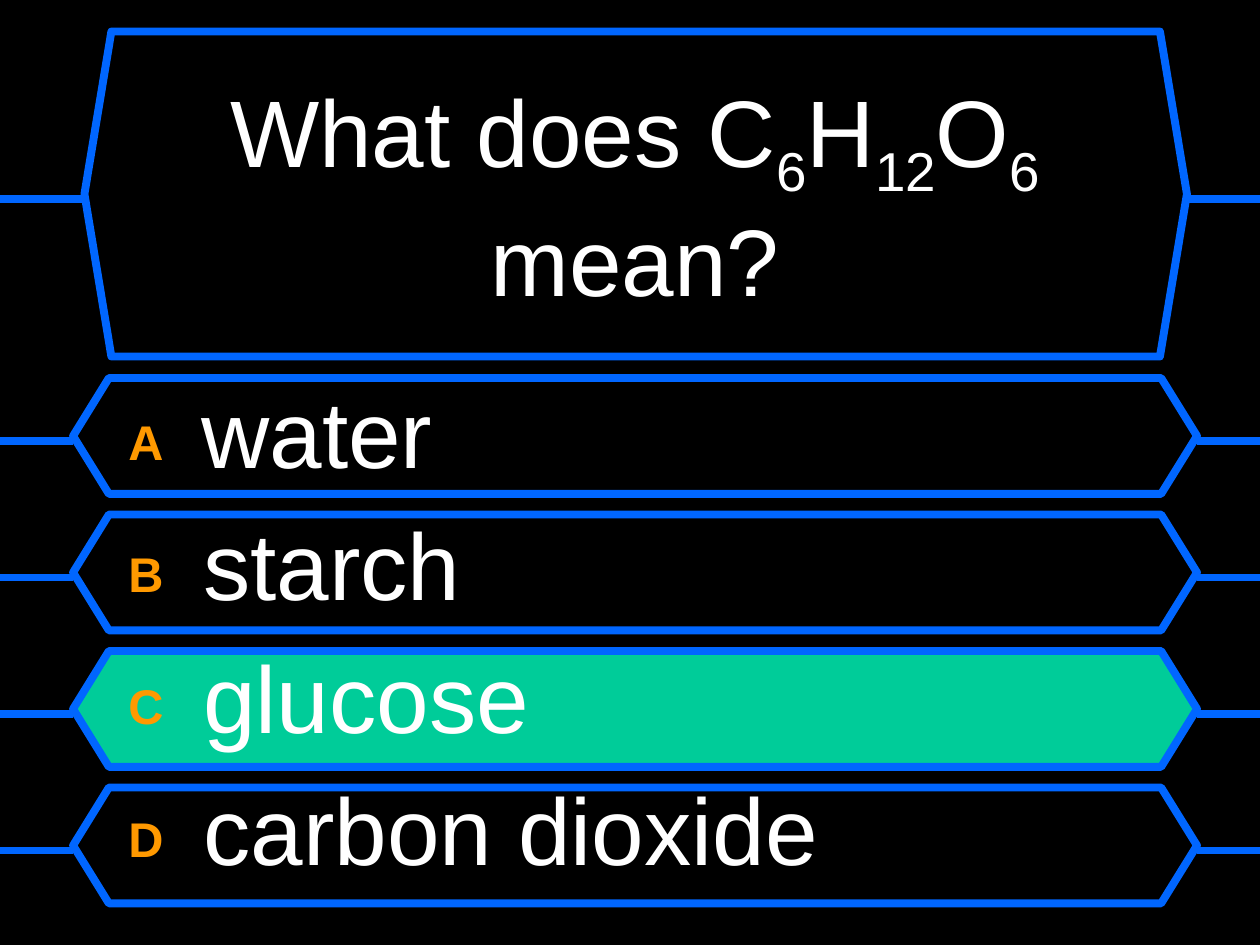
from pptx import Presentation
from pptx.dml.color import RGBColor
from pptx.enum import shapes, text
from pptx.oxml.xmlchemy import OxmlElement
from pptx.util import Inches, Pt

COLORS = {"black": "000000", "blue": "0066FF", "green": "00CC99",
          "orange": "FF9900", "white": "FFFFFF"}
SLIDE_WIDTH, SLIDE_HEIGHT = 10, 7.5
QUESTION = [("What does C", 0), ("6", -25), ("H", 0), ("12", -25),
            ("O", 0), ("6", -25), (" mean?", 0)]
ANSWERS = ["water", "starch", "glucose", "carbon dioxide"]
CORRECT = "glucose"
ANSWER_PITCH = 3.25 / 3
WIRE_DROP = 0.04


def rgb(name):
    return RGBColor.from_string(COLORS[name])


def style_line(line):
    line.color.rgb = rgb("blue")
    line.width = Pt(4.5)


def add_wire(slide, start, end, y):
    wire = slide.shapes.add_connector(
        shapes.MSO_CONNECTOR.STRAIGHT,
        Inches(start), Inches(y), Inches(end), Inches(y))
    style_line(wire.line)
    wire._element.spPr.append(OxmlElement("a:effectLst"))


def add_panel(slide, left, top, width, height, point, fill="black"):
    """Draw a hexagon with a wire from each tip to the slide edge."""
    panel = slide.shapes.add_shape(
        shapes.MSO_SHAPE.HEXAGON,
        Inches(left), Inches(top), Inches(width), Inches(height))
    panel.adjustments[0] = point
    panel.shadow.inherit = False
    panel.fill.solid()
    panel.fill.fore_color.rgb = rgb(fill)
    style_line(panel.line)
    wire_y = top + height / 2 + WIRE_DROP
    add_wire(slide, left, 0, wire_y)
    add_wire(slide, SLIDE_WIDTH, left + width, wire_y)


def add_run(paragraph, words, size, color, bold=False, baseline=0):
    """Add a run; baseline is its rise in percent of the text size."""
    run = paragraph.add_run()
    run.text = words
    run.font.size = Pt(size)
    run.font.bold = bold
    run.font.color.rgb = rgb(color)
    if baseline:
        run._r.get_or_add_rPr().set("baseline", str(baseline * 1000))


def add_question(slide, left, top, width, height):
    add_panel(slide, left, top, width, height, point=0.083)
    title = slide.shapes.title
    title.left, title.top = Inches(left + 0.16), Inches(top + 0.17)
    title.width, title.height = Inches(width - 0.33), Inches(height - 0.33)
    slide.shapes._spTree.append(title._element)  # bring in front of the panel
    frame = title.text_frame
    frame.word_wrap = True
    frame.vertical_anchor = text.MSO_ANCHOR.MIDDLE
    question = frame.paragraphs[0]
    question.alignment = text.PP_ALIGN.CENTER
    question.font.name = "Arial"
    for words, baseline in QUESTION:
        add_run(question, words, 54, "white", baseline=baseline)


def format_answer(paragraph):
    """Set a hanging indent and space before of 20% of a line."""
    paragraph.font.name = "Arial"
    properties = paragraph._p.get_or_add_pPr()
    properties.set("marL", str(Inches(0.38)))
    properties.set("indent", str(Inches(-0.38)))
    before, percent = OxmlElement("a:spcBef"), OxmlElement("a:spcPct")
    percent.set("val", "20000")
    before.append(percent)
    properties.insert(0, before)


def add_answers(slide, left, top, width, height):
    for row, answer in enumerate(ANSWERS):
        add_panel(slide, left, top + row * ANSWER_PITCH, width, height,
                  point=0.309, fill="green" if answer == CORRECT else "black")
    answer_list = slide.shapes.add_textbox(
        Inches(left + 0.34), Inches(top - 0.08),
        Inches(width - 0.59), Inches(4 * ANSWER_PITCH))
    frame = answer_list.text_frame
    frame.word_wrap = True
    for row, (letter, answer) in enumerate(zip("ABCD", ANSWERS)):
        paragraph = frame.add_paragraph() if row else frame.paragraphs[0]
        format_answer(paragraph)
        add_run(paragraph, letter + " ", 48, "orange", bold=True, baseline=10)
        add_run(paragraph, " ", 54, "black")
        add_run(paragraph, answer, 54, "white")


def main():
    deck = Presentation()
    deck.slide_width, deck.slide_height = Inches(SLIDE_WIDTH), Inches(SLIDE_HEIGHT)
    slide = deck.slides.add_slide(deck.slide_layouts.get_by_name("Title Only"))
    slide.background.fill.solid()
    slide.background.fill.fore_color.rgb = rgb("black")
    add_question(slide, 0.67, 0.25, 8.75, 2.58)
    add_answers(slide, 0.58, 3, 8.92, 0.92)
    deck.save("out.pptx")


if __name__ == "__main__":
    main()
